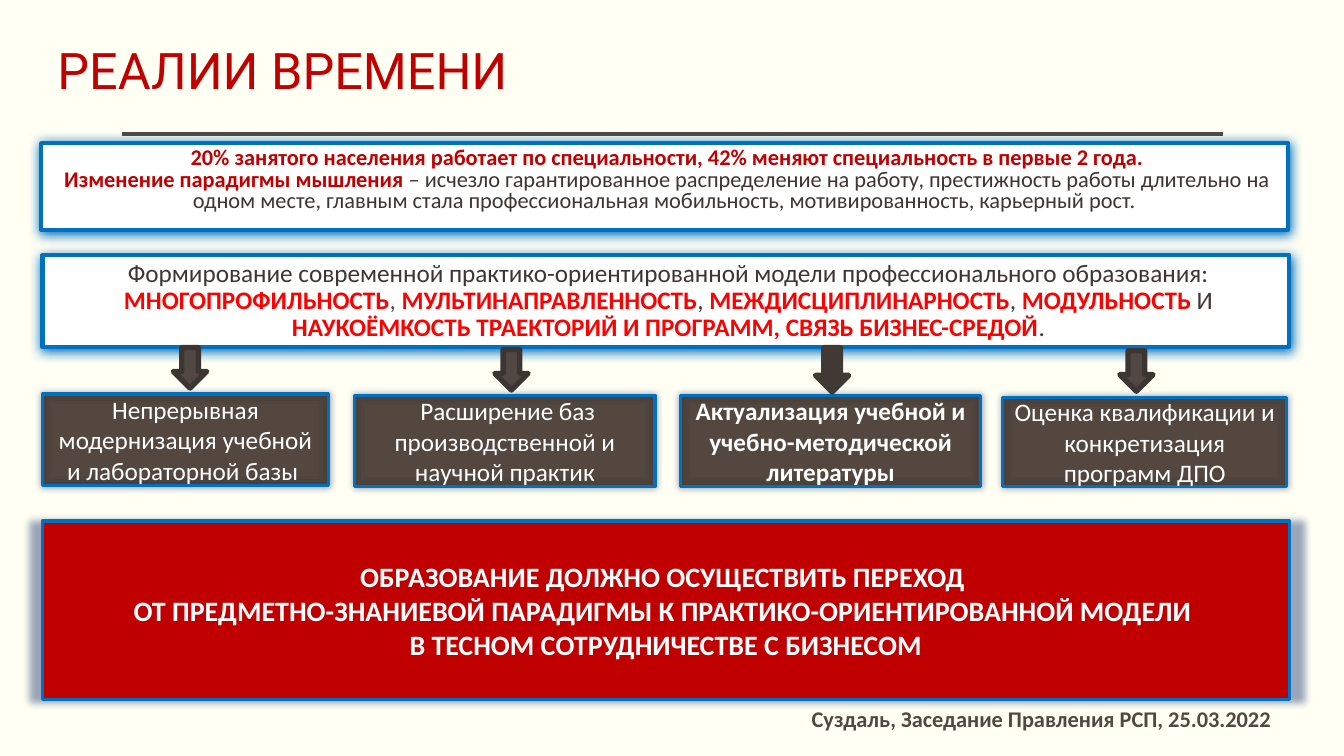
from dataclasses import dataclass

from lxml import etree
from pptx import Presentation
from pptx.dml.color import RGBColor
from pptx.enum.shapes import MSO_CONNECTOR, MSO_SHAPE
from pptx.enum.text import MSO_ANCHOR, PP_ALIGN
from pptx.oxml import parse_xml
from pptx.oxml.ns import nsdecls, qn
from pptx.util import Cm, Pt

RECTANGLE = MSO_SHAPE.RECTANGLE
DOWN_ARROW = MSO_SHAPE.DOWN_ARROW
STRAIGHT = MSO_CONNECTOR.STRAIGHT
TOP, MIDDLE, BOTTOM = MSO_ANCHOR.TOP, MSO_ANCHOR.MIDDLE, MSO_ANCHOR.BOTTOM
LEFT, CENTER = PP_ALIGN.LEFT, PP_ALIGN.CENTER


@dataclass(frozen=True)
class Theme:
    """Colours, fonts and type sizes of the slide."""
    background: str = "FFFFF3"
    white: str = "FFFFFF"
    blue: str = "0070C0"
    navy: str = "002060"
    crimson: str = "C00000"
    red: str = "FF0000"
    brown: str = "514843"
    ink: str = "3D3632"
    arrow_outline: str = "3C3532"
    dark_arrow: str = "413933"
    step_stops: tuple = ((0, "544740"), (71, "534740"), (100, "4A3F39"))
    title_font: str = "Roboto"
    body_font: str = "Calibri"
    title_size: int = 36
    goal_size: int = 20
    body_size: int = 18
    small_size: int = 16


THEME = Theme()
PANEL_INSETS = (0.13, 0.13, 0, 0.13)
TITLE_INSETS = (0, 0.13, 0, 0.13)
DEFAULT_INSETS = (0.25, 0.13, 0.25, 0.13)

FACTS = [
    [("20% занятого населения работает по специальности, 42% меняют специальность "
      "в первые 2 года.", THEME.crimson, True)],
    [("Изменение парадигмы мышления ", THEME.crimson, True),
     ("– исчезло гарантированное распределение на работу, престижность работы длительно "
      "на одном месте, главным стала профессиональная мобильность, мотивированность, "
      "карьерный рост. ", THEME.ink, False)],
]
MODEL = [[
    ("Формирование современной практико-ориентированной модели профессионального "
     "образования: ", THEME.ink, False),
    ("МНОГОПРОФИЛЬНОСТЬ", THEME.red, True),
    (", ", THEME.brown, False),
    ("МУЛЬТИНАПРАВЛЕННОСТЬ", THEME.red, True),
    (", ", THEME.ink, False),
    ("МЕЖДИСЦИПЛИНАРНОСТЬ", THEME.red, True),
    (", ", THEME.ink, False),
    ("МОДУЛЬНОСТЬ", THEME.red, True),
    (" И ", THEME.ink, False),
    ("НАУКОЁМКОСТЬ ТРАЕКТОРИЙ И ПРОГРАММ, СВЯЗЬ БИЗНЕС-СРЕДОЙ", THEME.red, True),
    (".", THEME.ink, False),
]]
STEPS = [
    ("Непрерывная модернизация учебной и лабораторной базы ", False,
     (1.07, 9.93, 7.21, 2.31)),
    (" Расширение баз производственной и научной практик", False,
     (8.94, 9.96, 7.57, 2.31)),
    ("Актуализация учебной и учебно-методической литературы", True,
     (17.15, 9.96, 7.57, 2.31)),
    ("Оценка квалификации и конкретизация программ ДПО", False,
     (25.27, 10.01, 7.16, 2.26)),
]
ARROWS = [
    ((4.37, 8.76, 0.84, 1.02), THEME.brown, THEME.arrow_outline),
    ((12.47, 8.81, 0.84, 1.02), THEME.brown, THEME.arrow_outline),
    ((20.55, 8.76, 0.84, 1.12), THEME.dark_arrow, THEME.dark_arrow),
    ((28.22, 8.84, 0.84, 1.02), THEME.brown, THEME.arrow_outline),
]
GOAL = [
    "ОБРАЗОВАНИЕ ДОЛЖНО ОСУЩЕСТВИТЬ ПЕРЕХОД ",
    "ОТ ПРЕДМЕТНО-ЗНАНИЕВОЙ ПАРАДИГМЫ К ПРАКТИКО-ОРИЕНТИРОВАННОЙ МОДЕЛИ ",
    "В ТЕСНОМ СОТРУДНИЧЕСТВЕ С БИЗНЕСОМ",
]


def write_text(shape, paragraphs, size, font=THEME.body_font, align=CENTER,
               anchor=TOP, insets=DEFAULT_INSETS, spacing=1.0):
    """Fill a shape with paragraphs made of (text, colour, bold) runs."""
    frame = shape.text_frame
    frame.word_wrap = True
    frame.vertical_anchor = anchor
    (frame.margin_left, frame.margin_top,
     frame.margin_right, frame.margin_bottom) = map(Cm, insets)
    for index, runs in enumerate(paragraphs):
        paragraph = frame.add_paragraph() if index else frame.paragraphs[0]
        paragraph.alignment = align
        paragraph.line_spacing = spacing
        for text, colour, bold in runs:
            run = paragraph.add_run()
            run.text = text
            run.font.name = font
            run.font.size = Pt(size)
            run.font.bold = bold
            run.font.color.rgb = RGBColor.from_string(colour)


def add_label(slide, box, paragraphs, size, **options):
    """Add a text box at a place given in centimetres."""
    shape = slide.shapes.add_textbox(*map(Cm, box))
    write_text(shape, paragraphs, size, **options)


def fill_from_centre(shape, stops):
    """Give a shape a rectangular gradient that starts at its centre."""
    marks = "".join(f'<a:gs pos="{position * 1000}"><a:srgbClr val="{colour}"/></a:gs>'
                    for position, colour in stops)
    gradient = parse_xml(
        f'<a:gradFill {nsdecls("a")} rotWithShape="1"><a:gsLst>{marks}</a:gsLst>'
        '<a:path path="rect"><a:fillToRect l="50000" t="50000" r="50000" b="50000"/>'
        '</a:path></a:gradFill>')
    shape._element.spPr.find(qn("a:prstGeom")).addnext(gradient)


def add_block(slide, kind, box, fill, outline, width):
    """Add an outlined preset shape with a plain or gradient fill."""
    shape = slide.shapes.add_shape(kind, *map(Cm, box))
    shape.shadow.inherit = False
    if isinstance(fill, str):
        shape.fill.solid()
        shape.fill.fore_color.rgb = RGBColor.from_string(fill)
    else:
        fill_from_centre(shape, fill)
    shape.line.color.rgb = RGBColor.from_string(outline)
    shape.line.width = Pt(width)
    return shape


def add_glow(shape, colour, opacity, blur, distance=0, angle=0, stretch=100):
    """Put a soft outer shadow on a shape."""
    effects = shape._element.spPr.find(qn("a:effectLst"))
    effects.append(parse_xml(
        f'<a:outerShdw {nsdecls("a")} blurRad="{Pt(blur)}" dist="{Pt(distance)}" '
        f'dir="{angle * 60000}" sx="{stretch * 1000}" algn="ctr" rotWithShape="0">'
        f'<a:srgbClr val="{colour}"><a:alpha val="{opacity * 1000}"/></a:srgbClr>'
        '</a:outerShdw>'))


def add_panel(slide, box, paragraphs, size, spacing):
    """Add a white panel with a blue outline and blue shadow."""
    shape = add_block(slide, RECTANGLE, box, THEME.white, THEME.blue, 3)
    add_glow(shape, THEME.blue, 100, 8.5, 1, 90)
    write_text(shape, paragraphs, size, insets=PANEL_INSETS, spacing=spacing)


def add_card(slide, box, fill, paragraphs, size, stretch=100):
    """Add a filled card with centred text and a navy shadow."""
    shape = add_block(slide, RECTANGLE, box, fill, THEME.blue, 2.25)
    add_glow(shape, THEME.navy, 40, 5, stretch=stretch)
    write_text(shape, paragraphs, size, anchor=MIDDLE)


def add_rule(slide, left, right, top):
    """Draw the horizontal rule under the title."""
    rule = slide.shapes.add_connector(STRAIGHT, Cm(left), Cm(top), Cm(right), Cm(top))
    rule.line.color.rgb = RGBColor.from_string(THEME.brown)
    rule.line.width = Pt(3)
    etree.SubElement(rule._element.spPr, qn("a:effectLst"))


def main():
    """Build the slide and save it."""
    presentation = Presentation()
    presentation.slide_width, presentation.slide_height = Cm(33.87), Cm(19.05)
    slide = presentation.slides.add_slide(presentation.slide_layouts[6])
    slide.background.fill.solid()
    slide.background.fill.fore_color.rgb = RGBColor.from_string(THEME.background)

    add_rule(slide, 3.07, 30.81, 3.38)
    add_label(slide, (1.45, 1.02, 31.04, 1.65), [[("РЕАЛИИ ВРЕМЕНИ", THEME.crimson, False)]],
              THEME.title_size, font=THEME.title_font, align=LEFT, anchor=BOTTOM,
              insets=TITLE_INSETS, spacing=0.9)
    add_panel(slide, (1.07, 6.43, 31.42, 2.31), MODEL, THEME.body_size, 0.9)
    add_panel(slide, (1.04, 3.61, 31.42, 2.18), FACTS, THEME.small_size, 0.8)
    for text, bold, box in STEPS:
        add_card(slide, box, THEME.step_stops, [[(text, THEME.white, bold)]], THEME.body_size)
    for box, fill, outline in ARROWS:
        add_block(slide, DOWN_ARROW, box, fill, outline, 3.78)
    add_card(slide, (1.07, 13.13, 31.42, 4.5), THEME.crimson,
             [[(line, THEME.white, True)] for line in GOAL], THEME.goal_size, stretch=102)
    add_label(slide, (18.64, 17.65, 15.21, 0.94),
              [[("Суздаль, Заседание Правления РСП, 25.03.2022", THEME.brown, True)]],
              THEME.small_size)
    presentation.save("out.pptx")


if __name__ == "__main__":
    main()
